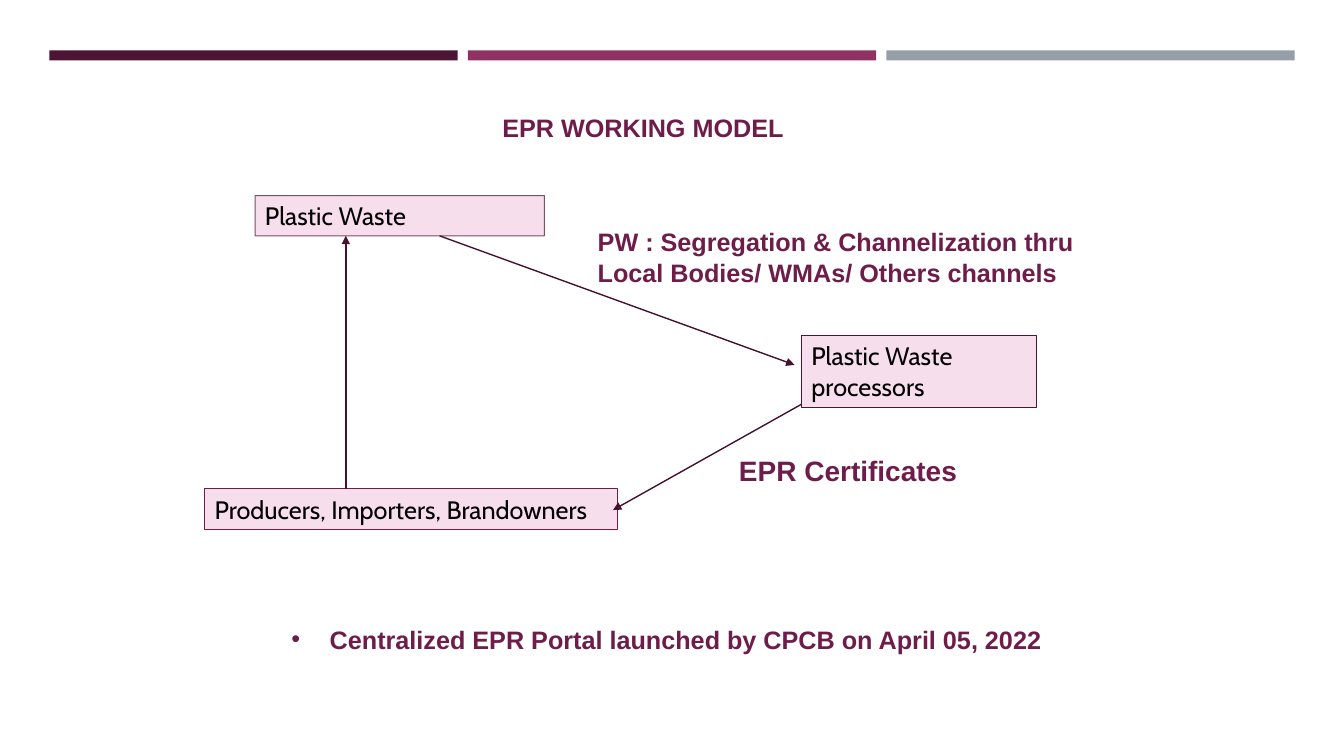
from dataclasses import dataclass

from lxml import etree
from pptx import Presentation, util as u
from pptx.dml.color import RGBColor
from pptx.enum import shapes, text
from pptx.oxml.ns import qn

PX = 9144  # EMU in one px, 100 px to the inch


@dataclass(frozen=True)
class Theme:
    plum: str = "4D1434"
    magenta: str = "903163"
    grey: str = "969FA7"
    pink: str = "F6DEEC"
    arrow: str = "45122F"
    accent: str = "6E1D4A"
    ink: str = "000000"
    box_font: str = "Cabin"
    font: str = "Arial"
    size: int = 18
    large: int = 20


class SlideBuilder:
    def __init__(self, slide, theme):
        self.slide = slide
        self.theme = theme

    def add_rect(self, x, y, width, height, fill):
        rect = self.slide.shapes.add_shape(
            shapes.MSO_SHAPE.RECTANGLE, *(v * PX for v in (x, y, width, height)))
        rect.shadow.inherit = False
        rect.fill.solid()
        rect.fill.fore_color.rgb = RGBColor.from_string(fill)
        rect.line.fill.background()
        return rect

    def set_text(self, frame, lines, font, size, color, bold=True,
                 align=text.PP_ALIGN.LEFT):
        frame.word_wrap = True
        frame.auto_size = text.MSO_AUTO_SIZE.NONE
        frame.vertical_anchor = text.MSO_ANCHOR.TOP
        for index, line in enumerate(lines):
            para = frame.paragraphs[0] if index == 0 else frame.add_paragraph()
            para.alignment = align
            para.space_before = u.Pt(0)
            span = para.add_run()
            span.text = line
            span.font.name = font
            span.font.size = u.Pt(size)
            span.font.bold = bold
            span.font.color.rgb = RGBColor.from_string(color)

    def add_box(self, x, y, width, height, label, border, opacity=100):
        box = self.add_rect(x, y, width, height, self.theme.pink)
        box.line.color.rgb = RGBColor.from_string(border)
        box.line.width = u.Pt(0.75)
        if opacity < 100:
            color = box.line._ln.find(".//" + qn("a:srgbClr"))
            etree.SubElement(color, qn("a:alpha"), val=str(opacity * 1000))
        self.set_text(box.text_frame, [label], self.theme.box_font,
                      self.theme.size, self.theme.ink, bold=False)

    def add_arrow(self, x1, y1, x2, y2):
        arrow = self.slide.shapes.add_connector(
            shapes.MSO_CONNECTOR.STRAIGHT, *(v * PX for v in (x1, y1, x2, y2)))
        arrow.line.color.rgb = RGBColor.from_string(self.theme.arrow)
        arrow.line.width = u.Pt(1)
        etree.SubElement(arrow.line._ln, qn("a:tailEnd"), type="triangle")
        etree.SubElement(arrow._element.spPr, qn("a:effectLst"))

    def add_label(self, x, y, width, height, lines, size):
        label = self.slide.shapes.add_textbox(
            *(v * PX for v in (x, y, width, height)))
        self.set_text(label.text_frame, lines, self.theme.font, size,
                      self.theme.accent)

    def fill_placeholder(self, holder, x, y, width, height, line, align):
        holder.left, holder.top = x * PX, y * PX
        holder.width, holder.height = width * PX, height * PX
        self.set_text(holder.text_frame, [line], self.theme.font,
                      self.theme.size, self.theme.accent, align=align)
        return holder.text_frame.paragraphs[0]

    def set_title(self, *place, line):
        self.fill_placeholder(self.slide.shapes.title, *place, line,
                              text.PP_ALIGN.CENTER)

    def set_bullet(self, *place, line, indent):
        para = self.fill_placeholder(self.slide.placeholders[1], *place, line,
                                     text.PP_ALIGN.JUSTIFY)
        para.line_spacing = 1.5
        props = para._p.get_or_add_pPr()
        props.set("marL", str(indent * PX))
        props.set("indent", str(-indent * PX))
        etree.SubElement(props, qn("a:buFont"), typeface=self.theme.font)
        etree.SubElement(props, qn("a:buChar"), char="•")


def main():
    deck = Presentation()
    deck.slide_width, deck.slide_height = 1333 * PX, 750 * PX
    theme = Theme()
    page = SlideBuilder(deck.slides.add_slide(deck.slide_layouts[1]), theme)

    # Bars across the top
    for index, color in enumerate((theme.plum, theme.magenta, theme.grey)):
        page.add_rect(49 + index * 415, 50, 405, 10, color)

    # Title and closing point
    page.set_title(324, 106, 634, 40, line="EPR WORKING MODEL ")
    page.set_bullet(279, 599, 807, 56, indent=38,
                    line="Centralized EPR Portal launched by CPCB on April 05, 2022")

    # Parties in the cycle
    page.add_box(253, 194, 287, 40, "Plastic Waste", theme.plum, opacity=72)
    page.add_box(795, 333, 233, 71, "Plastic Waste processors", theme.plum)
    page.add_box(203, 485, 409, 40, "Producers, Importers, Brandowners",
                 theme.accent)

    # Flow between the parties
    page.add_arrow(343, 485, 343, 234)
    page.add_arrow(436, 234, 788, 362)
    page.add_arrow(795, 401, 608, 506)

    # Flow labels
    page.add_label(723, 445, 337, 44, ["EPR Certificates"], theme.large)
    page.add_label(583, 220, 551, 71,
                   ["PW : Segregation & Channelization thru",
                    "Local Bodies/ WMAs/ Others channels"], theme.size)

    deck.save("out.pptx")


if __name__ == "__main__":
    main()
